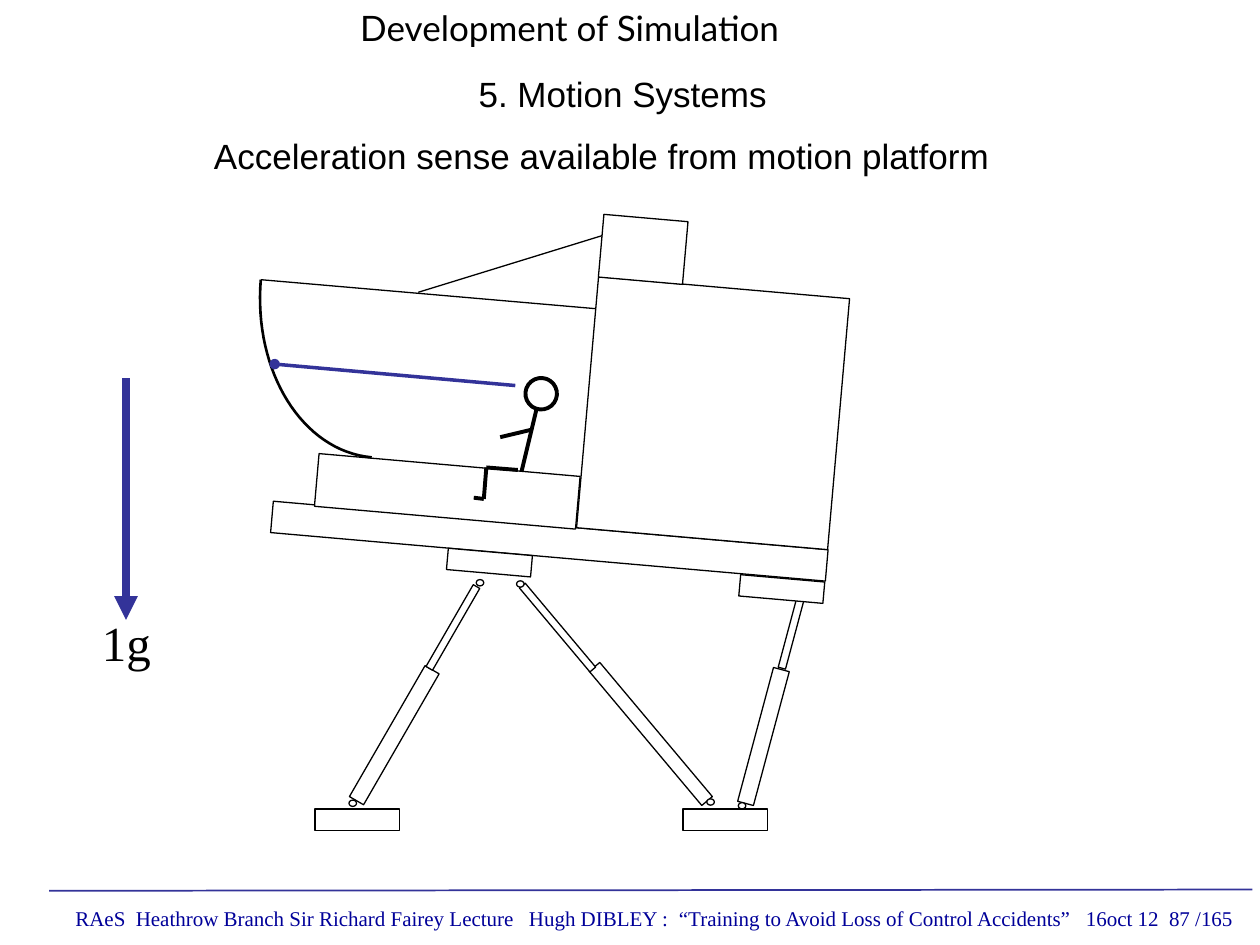
from lxml import etree
from pptx import Presentation
from pptx import util as u
from pptx.dml import color
from pptx.enum import shapes, text
from pptx.oxml import ns

COLUMNS, ROWS = 100, 75
CELL = u.Inches(0.1)
BLACK, WHITE, BLUE, NAVY = "000000", "FFFFFF", "333399", "000099"
TILT = 5
RECTANGLE = shapes.MSO_SHAPE.RECTANGLE
OVAL = shapes.MSO_SHAPE.OVAL


def cells(*values):
    return [round(value * CELL) for value in values]


def rgb(value):
    return color.RGBColor.from_string(value)


def style_line(line, tint, width):
    line.color.rgb = rgb(tint)
    line.width = u.Pt(width)


def add_outline(parent, kind, place, angle=0, width=0.75, fill=WHITE):
    shape = parent.add_shape(kind, *cells(*place))
    shape.shadow.inherit = False
    shape.rotation = angle
    if fill:
        shape.fill.solid()
        shape.fill.fore_color.rgb = rgb(fill)
    else:
        shape.fill.background()
    style_line(shape.line, BLACK, width)


def add_line(parent, start, end, tint=BLACK, width=0.75, head=None):
    line = parent.add_connector(shapes.MSO_CONNECTOR.STRAIGHT, *cells(*start, *end))
    style_line(line.line, tint, width)
    properties = line._element.spPr
    if head:
        tip = etree.SubElement(properties.find(ns.qn("a:ln")), ns.qn("a:tailEnd"))
        tip.set("type", head)
    etree.SubElement(properties, ns.qn("a:effectLst"))


def add_curve(parent, controls, width, steps=32):
    points = []
    for step in range(steps + 1):
        t = step / steps
        weights = ((1 - t) ** 3, 3 * t * (1 - t) ** 2, 3 * t * t * (1 - t), t ** 3)
        points.append(cells(*(sum(w * point[axis] for w, point in zip(weights, controls))
                              for axis in (0, 1))))
    builder = parent.build_freeform(*points[0])
    builder.add_line_segments(points[1:], close=False)
    curve = builder.convert_to_shape()
    curve.shadow.inherit = False
    curve.fill.background()
    style_line(curve.line, BLACK, width)


def add_text(parent, wording, place, font, size, tint=BLACK, wrap=False, spacing=None, tabs=()):
    box = parent.add_textbox(*cells(*place))
    box.text_frame.word_wrap = wrap
    box.text_frame.auto_size = text.MSO_AUTO_SIZE.NONE
    para = box.text_frame.paragraphs[0]
    para.text = wording
    para.line_spacing = spacing
    if tabs:
        stops = etree.SubElement(para._p.get_or_add_pPr(), ns.qn("a:tabLst"))
        for position in tabs:
            stop = etree.SubElement(stops, ns.qn("a:tab"))
            stop.set("pos", str(cells(position)[0]))
            stop.set("algn", "l")
    for span in para.runs:
        span.font.name = font
        span.font.size = u.Pt(size)
        span.font.color.rgb = rgb(tint)


def add_footer(page):
    add_line(page.shapes, (3.9, 70.7), (99.4, 70.6), BLUE, 1)
    wording = ("RAeS\tHeathrow Branch Sir Richard Fairey Lecture\tHugh DIBLEY :\t"
               "“Training to Avoid Loss of Control Accidents”\t16oct 12\t87 /165")
    add_text(page.shapes, wording, (5, 71.4, 95, 3), "Times New Roman", 12, NAVY,
             wrap=True, tabs=(4.8, 36, 47.9, 80.2, 86.8))


def add_leg(page, angle, barrel, rod, joints):
    leg = page.shapes.add_group_shape().shapes
    for place in (barrel, rod):
        add_outline(leg, RECTANGLE, place, angle)
    for left, top in joints:
        add_outline(leg, OVAL, (left, top, 0.6, 0.5))


def add_legs(page):
    for left in (25, 54.2):
        add_outline(page.shapes, RECTANGLE, (left, 64.2, 6.7, 1.7))
    add_leg(page, 230, (44.7, 57.7, 13.9, 1.1), (39.9, 49.5, 8.7, 0.6),
            ((41, 46.1), (56.1, 63.4)))
    add_leg(page, 300, (25.3, 57.7, 12, 1.3), (32.2, 49.5, 7.5, 0.6),
            ((37.8, 46), (27.7, 63.5)))
    add_leg(page, 285, (55.1, 57.8, 11, 1.3), (59.5, 49.4, 6.9, 0.6),
            ((63.7, 45.8), (58.6, 63.7)))


def add_pilot(cabin):
    add_outline(cabin, OVAL, (41.7, 30, 2.5, 2.5), TILT, 2.25, None)
    add_line(cabin, (42.6, 32.4), (41.4, 37.4), width=2.25)
    leg = ((41.1, 37.3), (38.6, 37.1), (38.4, 39.6), (37.6, 39.5))
    for start, end in zip(leg, leg[1:]):
        add_line(cabin, start, end, width=2.25)
    add_line(cabin, (42.2, 34.1), (39.7, 34.7), width=2.25)


def add_cabin(page):
    cabin = page.shapes.add_group_shape().shapes
    add_line(cabin, (20.7, 22.2), (47.3, 24.5))
    for place in ((21.5, 41.7, 44.2, 2.5), (35.5, 43.8, 6.7, 1.7), (58.7, 45.9, 6.7, 1.7),
                  (46.6, 22.8, 20, 20), (47.7, 17.3, 6.7, 5), (25.1, 36.9, 20.8, 4.2)):
        add_outline(cabin, RECTANGLE, place, TILT)
    add_line(cabin, (33.2, 23.2), (47.8, 18.7))
    add_pilot(cabin)
    add_curve(cabin, ((29.5, 36.3), (24, 35.8), (20.1, 29.5), (20.7, 22.2)), 1.5)
    add_line(cabin, (40.9, 30.6), (21.8, 28.9), BLUE, 2, "oval")


def add_gravity(page):
    add_line(page.shapes, (10, 30), (10, 49.2), BLUE, 4.5, "triangle")
    add_text(page.shapes, "1g", (7.1, 49, 5.9, 4.7), "Times New Roman", 28,
             wrap=True, spacing=0.8)


def add_headings(page):
    for wording, place, font in (
            ("Development of Simulation", (27.6, 0, 44.8, 4.3), "Lato"),
            ("Acceleration sense available from motion platform", (16, 10.2, 68.6, 4.3), "Arial"),
            ("5. Motion Systems", (37, 5.3, 26.4, 4.3), "Arial")):
        add_text(page.shapes, wording, place, font, 20)


def main():
    deck = Presentation()
    deck.slide_width, deck.slide_height = cells(COLUMNS, ROWS)
    page = deck.slides.add_slide(deck.slide_layouts[6])
    add_footer(page)
    add_legs(page)
    add_cabin(page)
    add_gravity(page)
    add_headings(page)
    deck.save("out.pptx")


if __name__ == "__main__":
    main()
